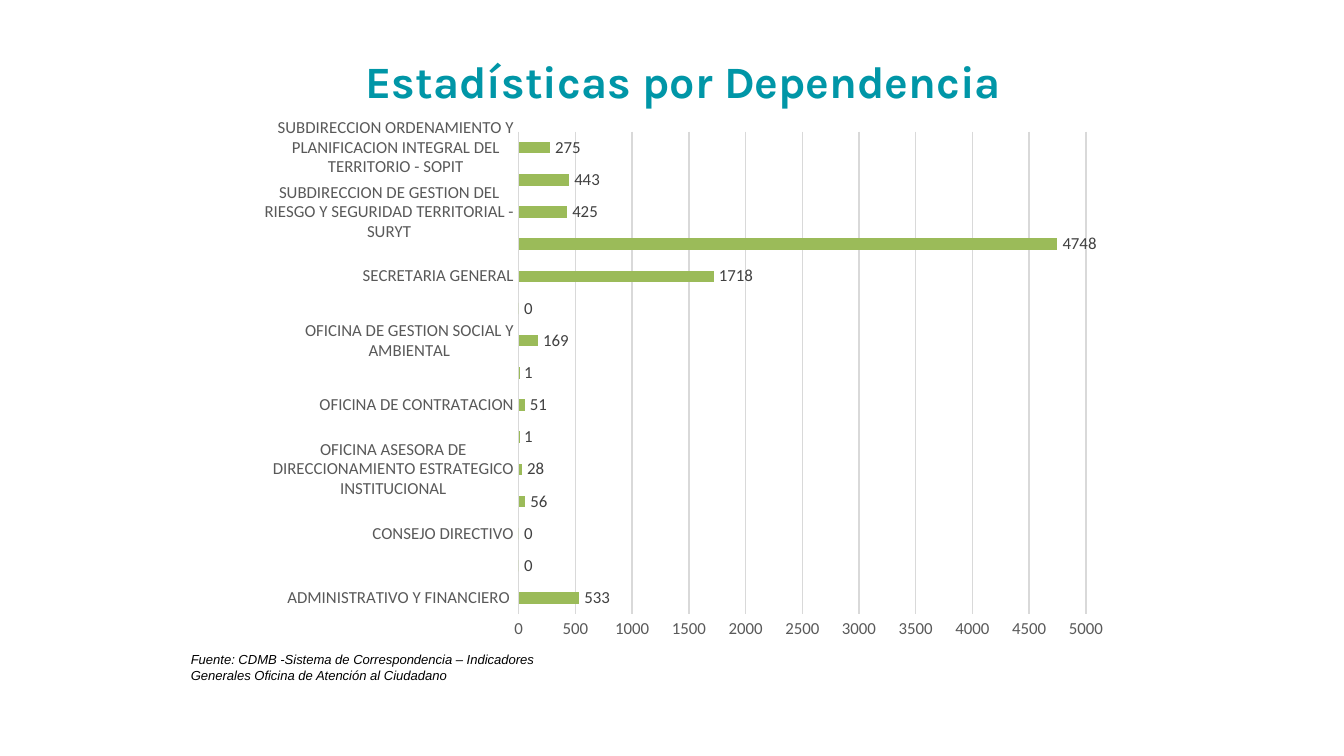
"""Build the slide with the number of requests per department as a bar chart."""
import pptx
import pptx.chart.data
import pptx.dml.color
import pptx.enum.chart
import pptx.enum.text
import pptx.oxml
import pptx.oxml.ns
import pptx.util

TITLE = "Estadísticas por Dependencia"
SOURCE = ("Fuente: CDMB -Sistema de Correspondencia – Indicadores "
          "Generales Oficina de Atención al Ciudadano")
REQUESTS = [
    ("ADMINISTRATIVO Y FINANCIERO ", 533),
    ("ASAMBLEA GENERAL", 0),
    ("CONSEJO DIRECTIVO", 0),
    ("DIRECCION GENERAL", 56),
    ("OFICINA ASESORA DE DIRECCIONAMIENTO ESTRATEGICO INSTITUCIONAL", 28),
    ("OFICINA CONTROL INTERNO", 1),
    ("OFICINA DE CONTRATACION", 51),
    ("OFICINA DE CONTROL DISCIPLINARIO INTERNO", 1),
    ("OFICINA DE GESTION SOCIAL Y AMBIENTAL", 169),
    ("REVISORA FISCAL", 0),
    ("SECRETARIA GENERAL", 1718),
    ("SUBDIRECCION DE EVALUACION Y CONTROL AMBIENTAL", 4748),
    ("SUBDIRECCION DE GESTION DEL RIESGO Y SEGURIDAD TERRITORIAL - SURYT", 425),
    ("SUBDIRECCION DE GESTION INTEGRAL DE LA OFERTA AMBIENTAL- SUGOA", 443),
    ("SUBDIRECCION ORDENAMIENTO Y PLANIFICACION INTEGRAL DEL TERRITORIO - SOPIT", 275),
]
COLORS = {"title": "0096A7", "bar": "9BBB59", "grid": "D9D9D9",
          "axis": "595959", "value": "404040", "source": "000000"}
WIDTH = 10
HEIGHT = WIDTH * 9 / 16
TITLE_BOX = (2.72, 0.4, 5.38, 0.4)
CHART_BOX = (1.83, 0.8, 6.5, 4.05)
PLOT_BOX = (2.03, 0.18, 4.22, 3.59)
SOURCE_BOX = (1.42, 4.85, 3.01, 0.25)


def color(part):
    return pptx.dml.color.RGBColor.from_string(COLORS[part])


def inches(box):
    return [pptx.util.Inches(length) for length in box]


def style_font(font, name, size, part, bold=False, italic=False):
    font.name, font.size = name, pptx.util.Pt(size)
    font.bold, font.italic = bold, italic
    font.color.rgb = color(part)


def write(shape, text, *style, **emphasis):
    frame = shape.text_frame
    frame.text = text
    frame.word_wrap = True
    frame.auto_size = pptx.enum.text.MSO_AUTO_SIZE.NONE
    frame.vertical_anchor = pptx.enum.text.MSO_ANCHOR.TOP
    frame.margin_left = frame.margin_right = frame.margin_top = frame.margin_bottom = 0
    paragraph = frame.paragraphs[0]
    paragraph.alignment = pptx.enum.text.PP_ALIGN.LEFT
    style_font(paragraph.runs[0].font, *style, **emphasis)


def style_line(line):
    line.color.rgb = color("grid")
    line.width = pptx.util.Pt(0.75)


def place_plot(chart):
    plot_area = chart._chartSpace.chart.plotArea
    for layout in plot_area.findall(pptx.oxml.ns.qn("c:layout")):
        plot_area.remove(layout)
    modes = '<c:xMode val="edge"/><c:yMode val="edge"/>'
    chart_sides = CHART_BOX[2:] * 2
    shares = "".join(f'<c:{side} val="{length / whole:.4f}"/>'
                     for side, length, whole in zip("xywh", PLOT_BOX, chart_sides))
    plot_area.insert(0, pptx.oxml.parse_xml(
        f'<c:layout {pptx.oxml.ns.nsdecls("c")}><c:manualLayout>'
        f'<c:layoutTarget val="inner"/>{modes}{shares}</c:manualLayout></c:layout>'))


def add_requests_chart(slide):
    departments, counts = zip(*REQUESTS)
    requests = pptx.chart.data.CategoryChartData()
    requests.categories = departments
    requests.add_series("Series 1", counts)
    chart = slide.shapes.add_chart(pptx.enum.chart.XL_CHART_TYPE.BAR_CLUSTERED,
                                   *inches(CHART_BOX), requests).chart
    chart.has_legend = chart.has_title = False
    style_font(chart.font, "Calibri", 10, "source")

    for axis in (chart.category_axis, chart.value_axis):
        axis.major_tick_mark = axis.minor_tick_mark = pptx.enum.chart.XL_TICK_MARK.NONE
        style_font(axis.tick_labels.font, "Calibri", 9, "axis")
    style_line(chart.category_axis.format.line)
    counts_axis = chart.value_axis
    counts_axis.minimum_scale, counts_axis.maximum_scale = 0, 5000
    counts_axis.major_unit = 500
    counts_axis.format.line.fill.background()
    style_line(counts_axis.major_gridlines.format.line)

    plot = chart.plots[0]
    plot.gap_width = 182
    plot.vary_by_categories = False
    bars = plot.series[0]
    bars.format.fill.solid()
    bars.format.fill.fore_color.rgb = color("bar")
    labels = bars.data_labels
    labels.show_value = True
    labels.position = pptx.enum.chart.XL_LABEL_POSITION.OUTSIDE_END
    style_font(labels.font, "Calibri", 9, "value")
    place_plot(chart)


def main():
    deck = pptx.Presentation()
    deck.slide_width, deck.slide_height = inches((WIDTH, HEIGHT))
    slide = deck.slides.add_slide(deck.slide_layouts.get_by_name("Title Only"))
    title = slide.shapes.title
    title.left, title.top, title.width, title.height = inches(TITLE_BOX)
    write(title, TITLE, "Karla", 24, "title", bold=True)
    add_requests_chart(slide)
    source = slide.shapes.add_textbox(*inches(SOURCE_BOX))
    write(source, SOURCE, "Arial", 7, "source", italic=True)
    deck.save("out.pptx")


if __name__ == "__main__":
    main()
